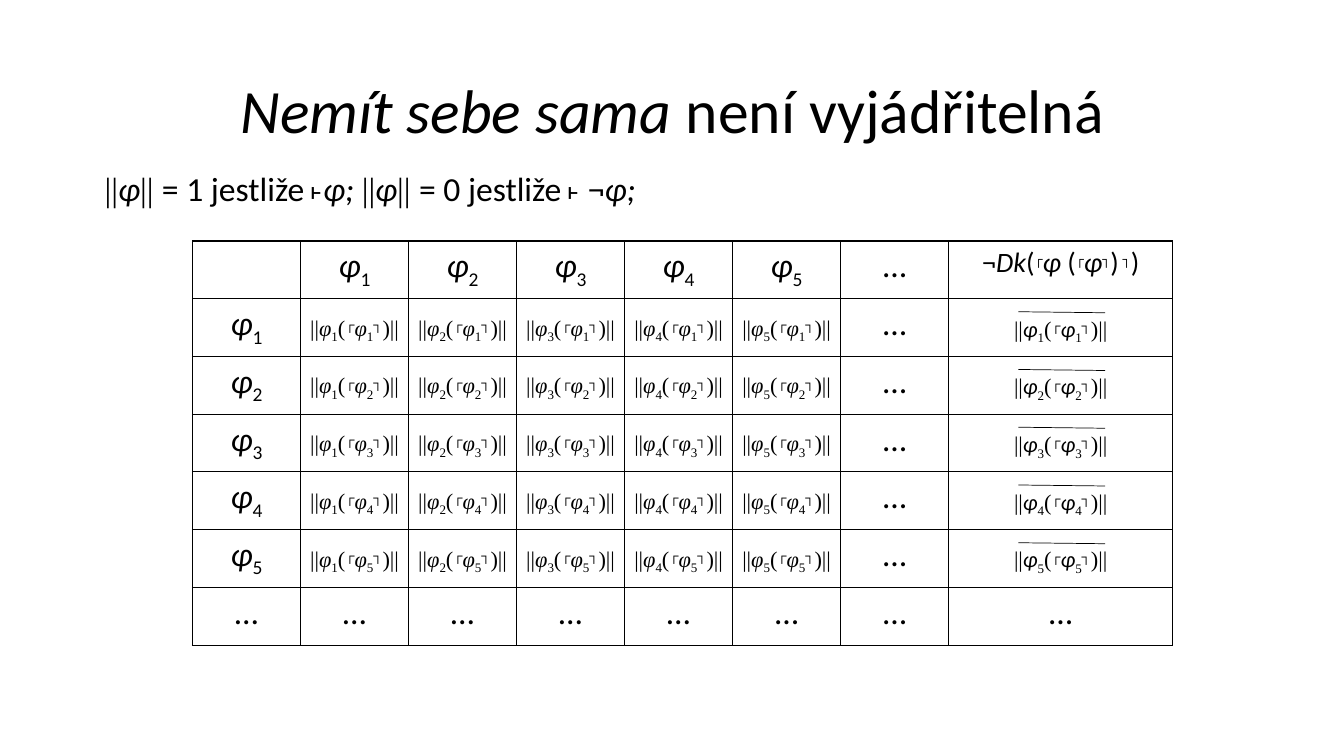
from lxml import etree
from pptx import Presentation
from pptx.dml.color import RGBColor
from pptx.enum.shapes import MSO_CONNECTOR
from pptx.enum.text import MSO_ANCHOR, PP_ALIGN
from pptx.oxml.ns import qn
from pptx.util import Inches, Pt

BLACK = RGBColor(0, 0, 0)
WHITE = RGBColor(255, 255, 255)
SANS, SERIF = "Calibri", "Times New Roman"
CENTER, LEFT = PP_ALIGN.CENTER, PP_ALIGN.LEFT
MIDDLE, TOP = MSO_ANCHOR.MIDDLE, MSO_ANCHOR.TOP
STRAIGHT = MSO_CONNECTOR.STRAIGHT
SUB, SUPER = -25000, 30000
COUNT = 5
ROWS = COUNT + 2
DOTS = "…"


def write(para, text, size=24, font=SANS, italic=False, base=0):
    run = para.add_run()
    run.text = text
    run.font.size = Pt(size)
    run.font.name = font
    run.font.italic = italic
    run.font.color.rgb = BLACK
    if base:
        run._r.get_or_add_rPr().set("baseline", str(base))


def add_text(slide, box, anchor, align):
    """Add an empty text box and return its paragraph."""
    frame = slide.shapes.add_textbox(*map(Inches, box)).text_frame
    frame.word_wrap = True
    frame.vertical_anchor = anchor
    para = frame.paragraphs[0]
    para.alignment = align
    return para


def add_title(slide, box):
    para = add_text(slide, box, MIDDLE, CENTER)
    para.line_spacing = 0.9
    write(para, "Nemít sebe sama", size=44, italic=True)
    write(para, " není vyjádřitelná", size=44)


def add_rule(slide, box):
    """State when a formula has value 1 and when 0."""
    para = add_text(slide, box, TOP, LEFT)
    for claim, end in (("= 1 jestliže ˫", "φ; "), ("= 0 jestliže ˫ ¬", "φ;")):
        write(para, "||", font=SERIF)
        write(para, "φ", italic=True)
        write(para, "|| ", font=SERIF)
        write(para, claim)
        write(para, end, italic=True)


def write_phi(para, index):
    write(para, "φ", italic=True)
    write(para, str(index), base=SUB)


def write_value(cell, outer, inner, font):
    """Write the value of formula outer applied to the code of inner."""
    cell.vertical_anchor = MIDDLE
    cell.margin_left = cell.margin_right = Inches(0.07)
    cell.margin_top = cell.margin_bottom = 0
    para = cell.text_frame.paragraphs[0]
    para.line_spacing = 1.2
    for text, base in (("||", 0), ("φ", 0), (str(outer), SUB), ("(", 0),
                       ("┌", SUPER), ("φ", 0), (str(inner), SUB),
                       ("┐", SUPER), (")||", 0)):
        phi = text == "φ"
        write(para, text, size=16, font=font if phi else SERIF,
              italic=phi, base=base)


def write_head(para):
    """Write the heading of the diagonal column."""
    for text, italic, base in (
            ("¬", False, 0), ("Dk", True, 0), ("(", False, 0),
            ("┌", False, SUPER), ("φ ", True, 0), ("(", False, 0),
            ("┌", False, SUPER), ("φ", True, 0), ("┐", False, SUPER),
            (")", False, 0), (" ┐", False, SUPER), (")", False, 0)):
        write(para, text, size=20, italic=italic, base=base)


def style_cell(cell):
    cell.fill.solid()
    cell.fill.fore_color.rgb = WHITE
    props = cell._tc.get_or_add_tcPr()
    for place, side in enumerate(("lnL", "lnR", "lnT", "lnB")):
        line = etree.Element(qn("a:" + side), w=str(Pt(1)))
        fill = etree.SubElement(line, qn("a:solidFill"))
        etree.SubElement(fill, qn("a:srgbClr"), val=str(BLACK))
        props.insert(place, line)
    cell.text_frame.paragraphs[0].alignment = CENTER


def add_grid(slide, box, cols):
    """Add a bordered empty table with equal rows and columns."""
    table = slide.shapes.add_table(ROWS, cols, *map(Inches, box)).table
    table.first_row = table.horz_banding = False
    for col in table.columns:
        col.width = Inches(box[2] / cols)
    for row in table.rows:
        row.height = Inches(box[3] / ROWS)
    for cell in table.iter_cells():
        style_cell(cell)
    return table


def add_values(slide, box):
    """Add the table of every formula applied to every code."""
    table = add_grid(slide, box, COUNT + 2)
    last = COUNT + 1
    for row in range(ROWS):
        for col in range(COUNT + 2):
            cell = table.cell(row, col)
            para = cell.text_frame.paragraphs[0]
            if last in (row, col):
                write(para, DOTS)
            elif row and col:
                write_value(cell, col, row, SERIF)
            elif row or col:
                write_phi(para, row or col)


def add_diagonal(slide, box):
    """Add the column of negated diagonal values with their overlines."""
    left, top, _, height = box
    table = add_grid(slide, box, 1)
    write_head(table.cell(0, 0).text_frame.paragraphs[0])
    write(table.cell(ROWS - 1, 0).text_frame.paragraphs[0], DOTS)
    for row in range(1, COUNT + 1):
        write_value(table.cell(row, 0), row, row, SANS)
        add_bar(slide, left + 0.69, top + row * height / ROWS + 0.13)


def add_bar(slide, left, top):
    bar = slide.shapes.add_connector(
        STRAIGHT, Inches(left), Inches(top),
        Inches(left + 0.86), Inches(top + 0.01))
    bar.line.color.rgb = BLACK
    bar.line.width = Pt(0.5)
    etree.SubElement(bar._element.spPr, qn("a:effectLst"))


def main():
    deck = Presentation()
    deck.slide_width = Inches(13.33)
    deck.slide_height = Inches(7.5)
    slide = deck.slides.add_slide(deck.slide_layouts[6])
    add_title(slide, (0.92, 0.4, 11.5, 1.45))
    add_values(slide, (1.91, 2.39, 7.5, 4.01))
    add_diagonal(slide, (9.41, 2.39, 2.22, 4.01))
    add_rule(slide, (0.94, 1.62, 11.16, 0.5))
    deck.save("out.pptx")


if __name__ == "__main__":
    main()
